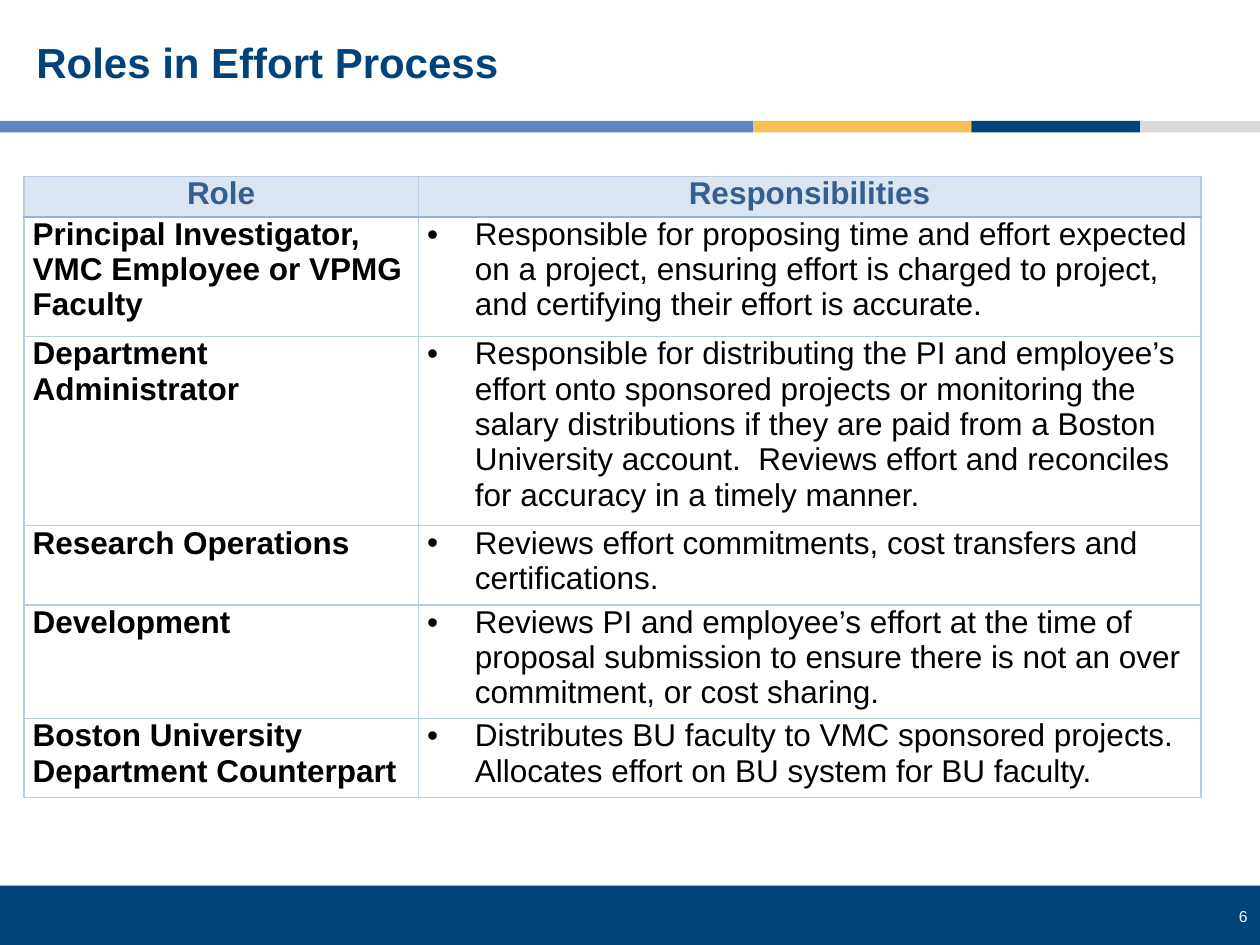
from lxml import etree
from pptx import Presentation
from pptx.dml.color import RGBColor
from pptx.enum.shapes import MSO_SHAPE
from pptx.enum.text import MSO_ANCHOR, PP_ALIGN
from pptx.oxml.ns import qn
from pptx.util import Inches, Pt

NAVY = RGBColor(0x00, 0x43, 0x7B)
BLUE = RGBColor(0x62, 0x83, 0xC2)
GOLD = RGBColor(0xF8, 0xBF, 0x56)
GRAY = RGBColor(0xD9, 0xD9, 0xD9)
WHITE = RGBColor(0xFF, 0xFF, 0xFF)
BLACK = RGBColor(0x00, 0x00, 0x00)
HEADER_TEXT = RGBColor(0x36, 0x5F, 0x91)
HEADER_FILL = RGBColor(0xDB, 0xE5, 0xF1)
BORDER = RGBColor(0xB8, 0xCC, 0xE4)
HEADER_RULE = RGBColor(0x95, 0xB3, 0xD7)

HEADER = ("Role", "Responsibilities")
ROLES = [
    ("Principal Investigator,\nVMC Employee or VPMG Faculty",
     "Responsible for proposing time and effort expected on a project, "
     "ensuring effort is charged to project, and certifying their effort is accurate."),
    ("Department Administrator",
     "Responsible for distributing the PI and employee’s effort onto sponsored "
     "projects or monitoring the salary distributions if they are paid from a Boston "
     "University account.  Reviews effort and reconciles for accuracy in a timely manner."),
    ("Research Operations",
     "Reviews effort commitments, cost transfers and certifications."),
    ("Development",
     "Reviews PI and employee’s effort at the time of proposal submission to ensure "
     "there is not an over commitment, or cost sharing."),
    ("Boston University Department Counterpart",
     "Distributes BU faculty to VMC sponsored projects.  "
     "Allocates effort on BU system for BU faculty."),
]
ROW_HEIGHTS = [0.32, 0.95, 1.27, 0.63, 0.63, 0.63]
COLUMN_WIDTHS = [3.13, 6.21]


def style_font(font, size, color, bold=False):
    font.name = "Arial"
    font.size = Pt(size)
    font.bold = bold
    font.color.rgb = color


def add_border(cell, side, color, width):
    """Draw one cell edge; side is L, R, T or B, called in that order before filling."""
    ln = etree.SubElement(cell._tc.get_or_add_tcPr(), qn(f"a:ln{side}"), w=str(Pt(width)))
    fill = etree.SubElement(ln, qn("a:solidFill"))
    etree.SubElement(fill, qn("a:srgbClr"), val=str(color))


prs = Presentation()
prs.slide_width, prs.slide_height = Inches(10), Inches(7.5)
s = prs.slides.add_slide(prs.slide_layouts[6])

# Footer band and the coloured strip under the title
bars = [
    (0, 7.03, 10, 0.47, NAVY),
    (0, 0.96, 5.98, 0.09, BLUE),
    (5.98, 0.96, 1.73, 0.09, GOLD),
    (7.71, 0.96, 1.34, 0.09, NAVY),
    (9.05, 0.96, 0.95, 0.09, GRAY),
]
for left, top, width, height, color in bars:
    sp = s.shapes.add_shape(MSO_SHAPE.RECTANGLE, Inches(left), Inches(top),
                            Inches(width), Inches(height))
    sp.shadow.inherit = False
    sp.fill.solid()
    sp.fill.fore_color.rgb = color
    sp.line.fill.background()

# Title and page number
labels = [
    ("Roles in Effort Process", 0.19, 0.17, 9.57, 0.69, 24, NAVY, True, PP_ALIGN.LEFT, 0.9),
    ("6", 9.31, 7.15, 0.69, 0.25, 9, WHITE, False, PP_ALIGN.RIGHT, 1.0),
]
for text, left, top, width, height, size, color, bold, align, spacing in labels:
    tf = s.shapes.add_textbox(Inches(left), Inches(top), Inches(width), Inches(height)).text_frame
    tf.word_wrap = True
    tf.vertical_anchor = MSO_ANCHOR.MIDDLE
    p = tf.paragraphs[0]
    p.text = text
    p.alignment = align
    p.line_spacing = spacing
    style_font(p.runs[0].font, size, color, bold)

# Roles table
rows = [HEADER] + ROLES
table = s.shapes.add_table(len(rows), len(HEADER), Inches(0.19), Inches(1.4),
                           Inches(sum(COLUMN_WIDTHS)), Inches(sum(ROW_HEIGHTS))).table
table.first_row = table.horz_banding = False
for column, width in zip(table.columns, COLUMN_WIDTHS):
    column.width = Inches(width)
for row, height in zip(table.rows, ROW_HEIGHTS):
    row.height = Inches(height)

for i, row in enumerate(rows):
    is_header = i == 0
    for j, text in enumerate(row):
        cell = table.cell(i, j)
        cell.text = text
        cell.margin_left = cell.margin_right = Inches(0.07)
        cell.margin_top = cell.margin_bottom = 0
        add_border(cell, "L", BORDER, 1)
        add_border(cell, "R", BORDER, 1)
        add_border(cell, "T", *((HEADER_RULE, 1.5) if i == 1 else (BORDER, 1)))
        add_border(cell, "B", *((HEADER_RULE, 1.5) if is_header else (BORDER, 1)))
        if is_header:
            cell.fill.solid()
            cell.fill.fore_color.rgb = HEADER_FILL
        else:
            cell.fill.background()
        for p in cell.text_frame.paragraphs:
            p.alignment = PP_ALIGN.CENTER if is_header else PP_ALIGN.LEFT
            if j == 1 and not is_header:
                pPr = p._p.get_or_add_pPr()
                pPr.set("marL", str(Inches(0.38)))
                pPr.set("indent", str(-Inches(0.38)))
                etree.SubElement(pPr, qn("a:buFont"), typeface="Arial")
                etree.SubElement(pPr, qn("a:buChar"), char="•")
            style_font(p.runs[0].font, 18, HEADER_TEXT if is_header else BLACK,
                       is_header or j == 0)

prs.save("out.pptx")
